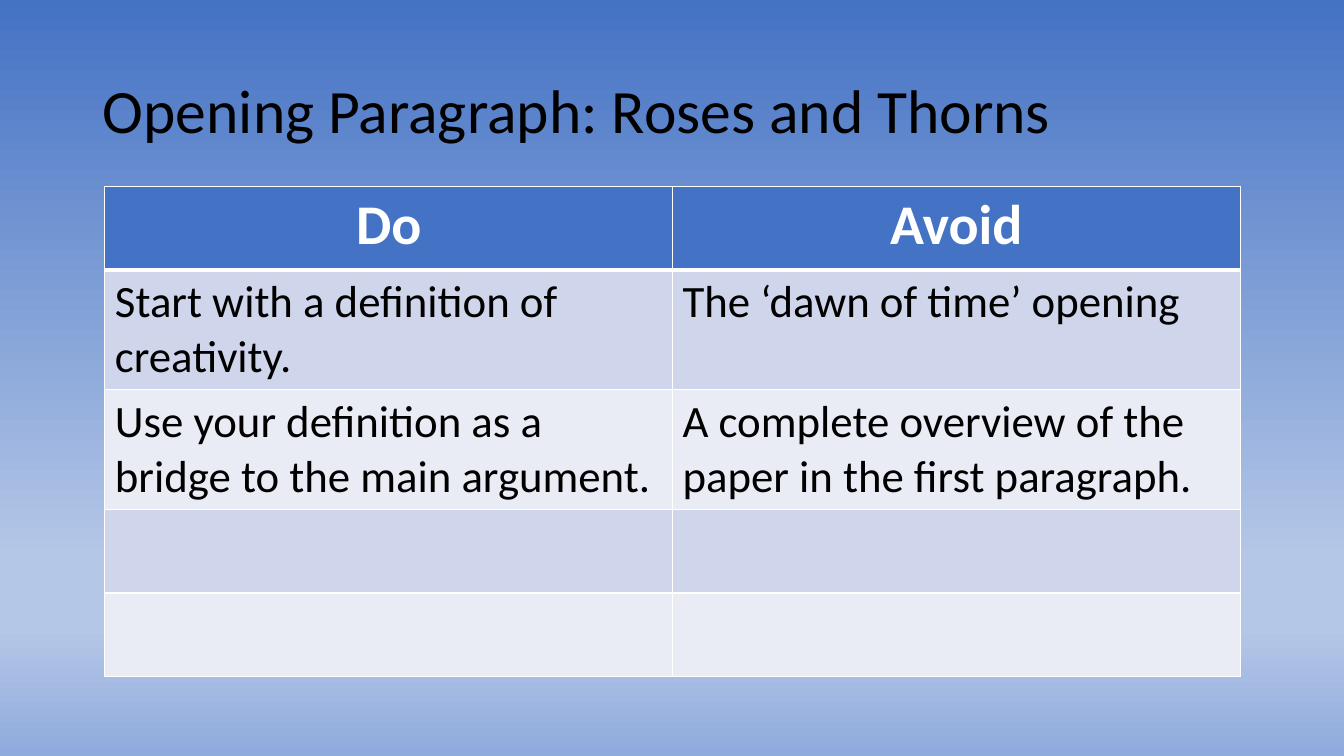
from dataclasses import dataclass

from lxml.etree import SubElement
from pptx import Presentation
from pptx.dml.color import RGBColor
from pptx.enum.text import MSO_ANCHOR, PP_ALIGN
from pptx.oxml.ns import qn
from pptx.util import Inches, Pt

TITLE = "Opening Paragraph: Roses and Thorns"
ROWS = [
    ("Do", "Avoid"),
    ("Start with a definition of creativity.", "The ‘dawn of time’ opening"),
    ("Use your definition as a bridge to the main argument.",
     "A complete overview of the paper in the first paragraph."),
    ("", ""),
    ("", ""),
]


@dataclass(frozen=True)
class Theme:
    font: str = "Calibri"
    text: str = "000000"
    header_text: str = "FFFFFF"
    header_fill: str = "4472C4"
    bands: tuple = ("CFD5EA", "E9EBF5")
    border: str = "FFFFFF"
    border_width: float = 1
    header_rule: float = 3
    title_size: int = 44
    header_size: int = 40
    body_size: int = 32
    background: tuple = ((0, "4472C4"), (74, "B4C7E7"), (83, "B4C7E7"), (100, "8FAADC"))


THEME = Theme()
WIDTH, HEIGHT = 13.33, 7.5
TITLE_BOX = (0.92, 0.4, 11.5, 1.45)
TABLE_LEFT, TABLE_TOP = 1.04, 1.85
COLUMN_WIDTH, ROW_HEIGHT = 5.63, 0.83


def paint_background(slide):
    fill = slide.background.fill
    fill.gradient()
    fill.gradient_angle = 270
    stops = slide.element.find(".//" + qn("a:gsLst"))
    for stop in list(stops):
        stops.remove(stop)
    for percent, color in THEME.background:
        stop = SubElement(stops, qn("a:gs"), pos=str(percent * 1000))
        SubElement(stop, qn("a:srgbClr"), val=color)


def style_text(text_frame, size, color, bold=False):
    for paragraph in text_frame.paragraphs:
        for run in paragraph.runs:
            font = run.font
            font.name, font.size, font.bold = THEME.font, Pt(size), bold
            font.color.rgb = RGBColor.from_string(color)


def add_borders(cell, row_index):
    """Draw the cell's four edges, with a heavier rule under the header row."""
    properties = cell._tc.get_or_add_tcPr()
    heavy_edge = {0: "lnB", 1: "lnT"}.get(row_index)
    for edge in ("lnL", "lnR", "lnT", "lnB"):
        width = THEME.header_rule if edge == heavy_edge else THEME.border_width
        line = SubElement(properties, qn("a:" + edge), w=str(Pt(width)))
        fill = SubElement(line, qn("a:solidFill"))
        SubElement(fill, qn("a:srgbClr"), val=THEME.border)


def add_title(slide):
    title = slide.shapes.title
    title.left, title.top, title.width, title.height = map(Inches, TITLE_BOX)
    text_frame = title.text_frame
    text_frame.text = TITLE
    text_frame.word_wrap = True
    text_frame.vertical_anchor = MSO_ANCHOR.MIDDLE
    text_frame.paragraphs[0].alignment = PP_ALIGN.LEFT
    text_frame.paragraphs[0].line_spacing = 0.9
    style_text(text_frame, THEME.title_size, THEME.text)


def add_advice_table(slide):
    row_count, column_count = len(ROWS), len(ROWS[0])
    table = slide.shapes.add_table(
        row_count, column_count, Inches(TABLE_LEFT), Inches(TABLE_TOP),
        Inches(COLUMN_WIDTH * column_count), Inches(ROW_HEIGHT * row_count)).table
    for row_index, texts in enumerate(ROWS):
        is_header = row_index == 0
        color = THEME.header_fill if is_header else THEME.bands[(row_index - 1) % 2]
        for column_index, text in enumerate(texts):
            cell = table.cell(row_index, column_index)
            add_borders(cell, row_index)
            cell.fill.solid()
            cell.fill.fore_color.rgb = RGBColor.from_string(color)
            cell.text_frame.text = text
            if is_header:
                cell.text_frame.paragraphs[0].alignment = PP_ALIGN.CENTER
                style_text(cell.text_frame, THEME.header_size, THEME.header_text, True)
            else:
                style_text(cell.text_frame, THEME.body_size, THEME.text)


def main():
    presentation = Presentation()
    presentation.slide_width, presentation.slide_height = Inches(WIDTH), Inches(HEIGHT)
    slide = presentation.slides.add_slide(presentation.slide_layouts.get_by_name("Title Only"))
    paint_background(slide)
    add_title(slide)
    add_advice_table(slide)
    presentation.save("out.pptx")


if __name__ == "__main__":
    main()
